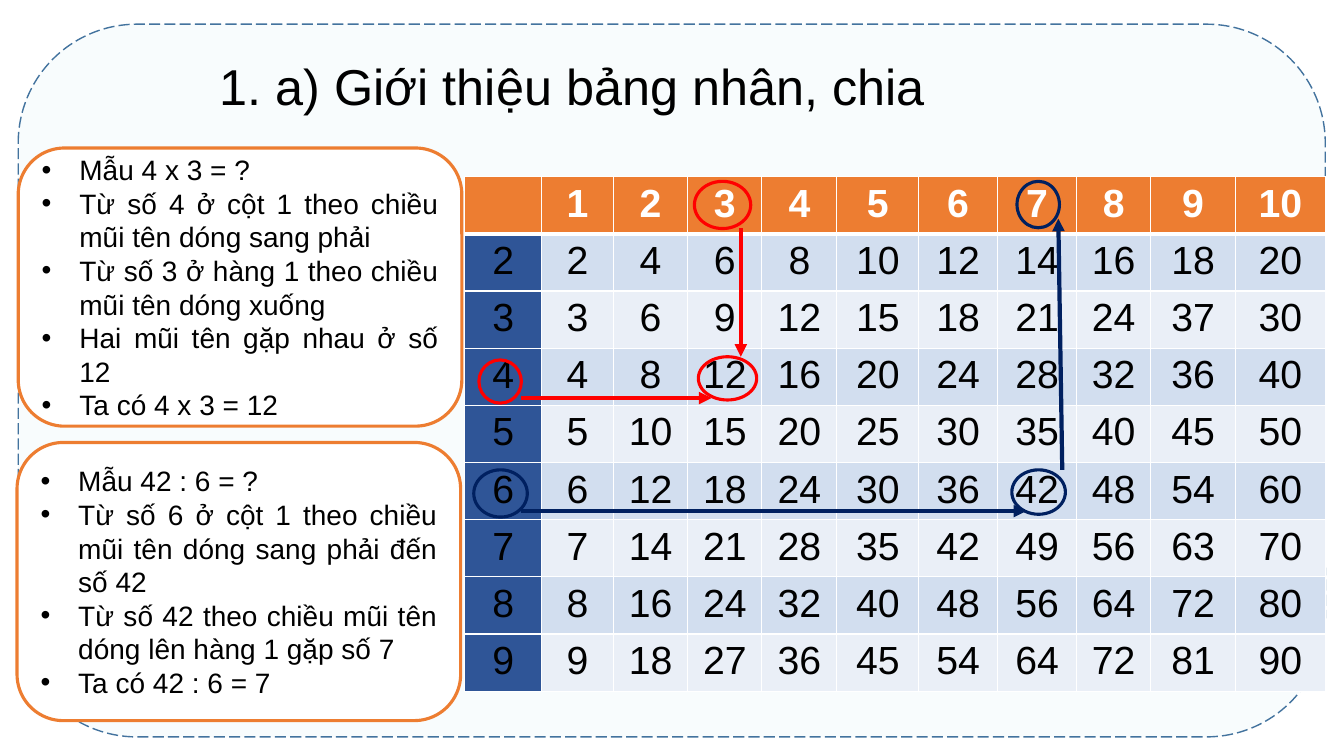
import lxml.etree
import pptx
import pptx.dml.color
import pptx.enum.dml
import pptx.enum.shapes
import pptx.enum.text
import pptx.oxml.ns
import pptx.util

Cm, Pt = pptx.util.Cm, pptx.util.Pt
qn = pptx.oxml.ns.qn
KIND = pptx.enum.shapes.MSO_SHAPE
ALIGN = pptx.enum.text.PP_ALIGN

# Content
TITLE = "1. a) Giới thiệu bảng nhân, chia"
NOTES = [
    ((0.46, 3.73), [
        "Mẫu 4 x 3 = ?",
        "Từ số 4 ở cột 1 theo chiều mũi tên dóng sang phải",
        "Từ số 3 ở hàng 1 theo chiều mũi tên dóng xuống",
        "Hai mũi tên gặp nhau ở số 12",
        "Ta có 4 x 3 = 12",
    ]),
    ((0.43, 11.15), [
        "Mẫu 42 : 6 = ?",
        "Từ số 6 ở cột 1 theo chiều mũi tên dóng sang phải đến số 42",
        "Từ số 42 theo chiều mũi tên dóng lên hàng 1 gặp số 7",
        "Ta có 42 : 6 = 7",
    ]),
]
TOP = range(1, 11)
SIDE = range(2, 10)
ODD = {(3, 9): 37, (9, 7): 64}  # cells that differ from the product
GRID = [["", *TOP]] + [[a, *(ODD.get((a, b), a * b) for b in TOP)] for a in SIDE]

# Places, in centimetres
FRAME = (0.46, 0.61, 32.94, 17.96)
HEAD = (2.41, 1.27, 24.03, 1.8)
NOTE = (11.18, 7.01)
TABLE = (11.71, 4.45)
COLS = [1.94, 1.81, 1.87, 1.87, 1.89, 2.06, 1.99, 1.99, 1.87, 2.13, 2.27]
ROW = 1.44
INDENT = 0.95
MARKS = {
    "red": {
        "rings": [(17.5, 4.57, 1.42, 1.19), (12.07, 9.07, 1.07, 1.09),
                  (17.6, 8.99, 1.47, 1.09)],
        "arrows": [(18.67, 5.74, 18.67, 8.99), (13.13, 10.03, 17.93, 10.03)],
    },
    "navy": {
        "rings": [(25.63, 4.57, 1.07, 1.17), (11.94, 11.84, 1.35, 1.19),
                  (25.5, 11.84, 1.35, 1.12)],
        "arrows": [(26.77, 11.84, 26.67, 5.51), (13.13, 12.88, 25.86, 12.88)],
    },
}

THEME = {
    "font": "Arial",
    "size": {"title": 36, "cell": 28, "note": 20},
    "line": {"frame": 1, "ring": 2.25, "arrow": 3, "thin": 1, "thick": 3},
    "color": {
        "white": "FFFFFF", "black": "000000", "pale": "F8FCFD",
        "steel": "43739E", "orange": "ED7D31", "blue": "2F5597",
        "band": "D2DEEF", "light": "EAEFF7", "red": "FF0000", "navy": "002060",
    },
}


def apply(item, values):
    for name, value in values.items():
        setattr(item, name, value)


def color(name):
    return pptx.dml.color.RGBColor.from_string(THEME["color"][name])


def paint(item, name):
    item.fill.solid()
    item.fill.fore_color.rgb = color(name)


def stroke(line, name, width):
    line.color.rgb = color(name)
    line.width = Pt(THEME["line"][width])


def write(para, text, size, align, ink="black", bold=False):
    para.alignment = align
    font = para.add_run().font
    para.runs[0].text = str(text)
    apply(font, {"name": THEME["font"], "size": Pt(THEME["size"][size]), "bold": bold})
    font.color.rgb = color(ink)


def shape(slide, kind, box, fill, edge, width):
    item = slide.shapes.add_shape(kind, *map(Cm, box))
    item.shadow.inherit = False
    if fill:
        paint(item, fill)
    else:
        item.fill.background()
    stroke(item.line, edge, width)
    return item


def arrow(slide, ends, ink):
    link = slide.shapes.add_connector(
        pptx.enum.shapes.MSO_CONNECTOR.STRAIGHT, *map(Cm, ends))
    stroke(link.line, ink, "arrow")
    props = link.element.spPr
    lxml.etree.SubElement(props.find(qn("a:ln")), qn("a:tailEnd"), type="triangle")
    lxml.etree.SubElement(props, qn("a:effectLst"))


def border(cell, side, width):
    edge = lxml.etree.SubElement(
        cell._tc.get_or_add_tcPr(), qn("a:ln" + side),
        w=str(Pt(THEME["line"][width])))
    fill = lxml.etree.SubElement(edge, qn("a:solidFill"))
    lxml.etree.SubElement(fill, qn("a:srgbClr"), val=THEME["color"]["white"])


def table(slide):
    size = sum(COLS), ROW * len(GRID)
    grid = slide.shapes.add_table(
        len(GRID), len(COLS), *map(Cm, TABLE + size)).table
    for col, width in zip(grid.columns, COLS):
        col.width = Cm(width)
    for r, row in enumerate(GRID):
        for c, value in enumerate(row):
            cell = grid.cell(r, c)
            for side in "LRTB":
                thick = (r, side) in ((0, "B"), (1, "T"))
                border(cell, side, "thick" if thick else "thin")
            if r == 0:
                fill = "orange"
            elif c == 0:
                fill = "blue"
            else:
                fill = "band" if r % 2 else "light"
            paint(cell, fill)
            ink = "black" if r else "white"
            write(cell.text_frame.paragraphs[0], value, "cell", ALIGN.CENTER, ink, r == 0)


def note(slide, spot, lines):
    box = shape(slide, KIND.ROUNDED_RECTANGLE, spot + NOTE, "white", "orange", "ring")
    frame = box.text_frame
    apply(frame, {"word_wrap": True,
                  "vertical_anchor": pptx.enum.text.MSO_ANCHOR.MIDDLE})
    for i, text in enumerate(lines):
        para = frame.add_paragraph() if i else frame.paragraphs[0]
        props = para._p.get_or_add_pPr()
        props.set("marL", str(Cm(INDENT)))
        props.set("indent", str(-Cm(INDENT)))
        lxml.etree.SubElement(props, qn("a:buFont"), typeface=THEME["font"])
        lxml.etree.SubElement(props, qn("a:buChar"), char="•")
        write(para, text, "note", ALIGN.JUSTIFY)


def main():
    deck = pptx.Presentation()
    apply(deck, {"slide_width": Cm(33.87), "slide_height": Cm(19.05)})
    slide = deck.slides.add_slide(deck.slide_layouts[6])

    # Frame and title
    back = shape(slide, KIND.ROUNDED_RECTANGLE, FRAME, "pale", "steel", "frame")
    back.line.dash_style = pptx.enum.dml.MSO_LINE.LONG_DASH
    head = slide.shapes.add_textbox(*map(Cm, HEAD)).text_frame
    apply(head, {"word_wrap": True,
                 "auto_size": pptx.enum.text.MSO_AUTO_SIZE.SHAPE_TO_FIT_TEXT})
    write(head.paragraphs[0], TITLE, "title", ALIGN.CENTER)

    # Table with rings and arrows
    table(slide)
    for ink, marks in MARKS.items():
        for box in marks["rings"]:
            shape(slide, KIND.OVAL, box, None, ink, "ring")
        for ends in marks["arrows"]:
            arrow(slide, ends, ink)

    # Worked examples
    for spot, lines in NOTES:
        note(slide, spot, lines)

    deck.save("out.pptx")


if __name__ == "__main__":
    main()
